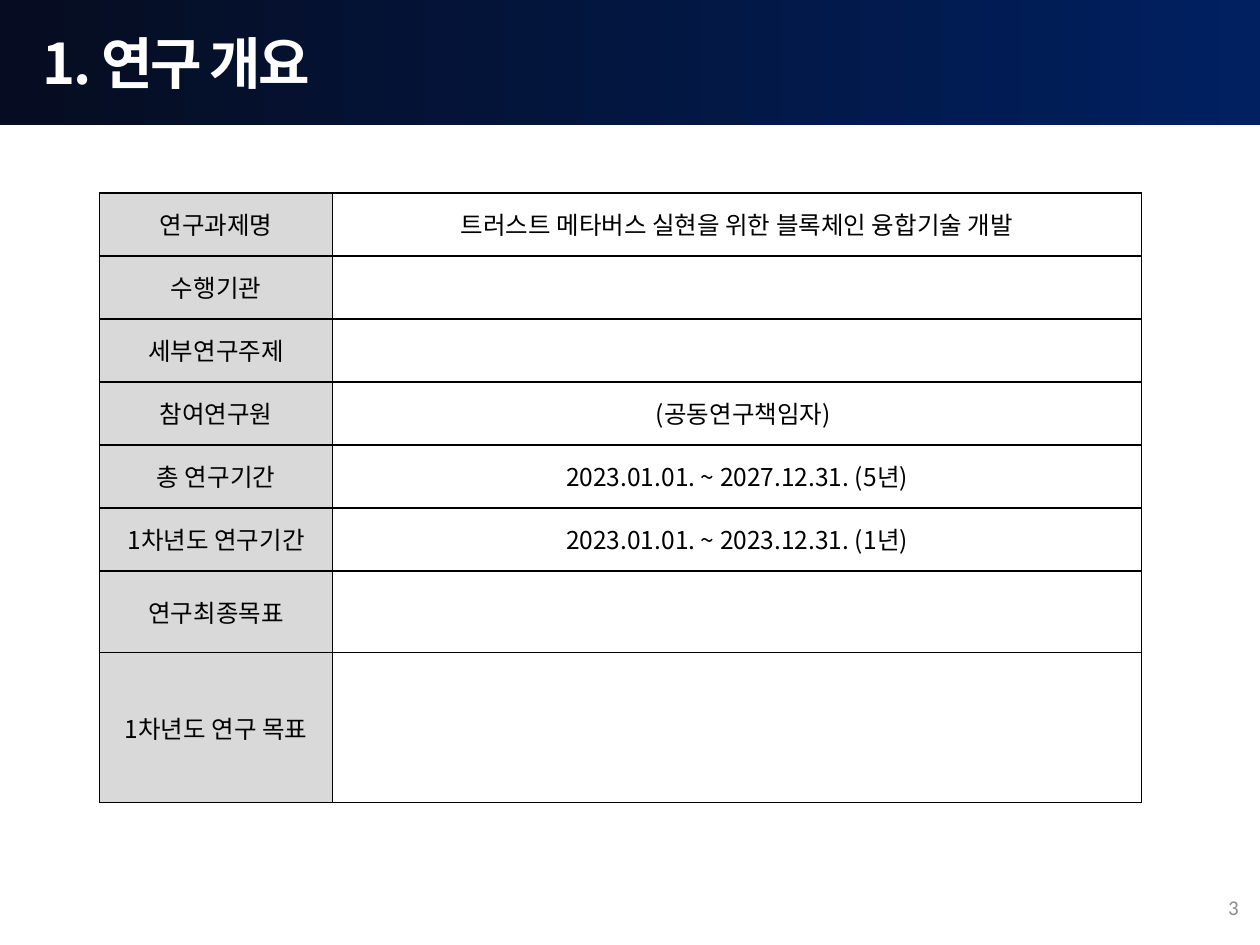
from pptx import Presentation, util as u
from pptx.dml.color import RGBColor
from pptx.enum import shapes, text
from pptx.oxml import parse_xml
from pptx.oxml.ns import nsdecls, qn

W, H = u.Inches(10), u.Inches(7.5)
KR = "Noto Sans CJK KR"
COLUMNS = [1.85, 6.42]
ROWS = [
    ("연구과제명", "트러스트 메타버스 실현을 위한 블록체인 융합기술 개발", 0.5),
    ("수행기관", "", 0.5),
    ("세부연구주제", "", 0.5),
    ("참여연구원", "(공동연구책임자)", 0.5),
    ("총 연구기간", "2023.01.01. ~ 2027.12.31. (5년)", 0.5),
    ("1차년도 연구기간", "2023.01.01. ~ 2023.12.31. (1년)", 0.5),
    ("연구최종목표", "", 0.65),
    ("1차년도 연구 목표", "", 1.19),
]


def rgb(value):
    return RGBColor.from_string(value)


def add_run(p, words, size, color, font=KR, bold=False, spacing=None):
    r = p.add_run()
    r.text = words
    r.font.size, r.font.name, r.font.bold = u.Pt(size), font, bold
    r.font.color.rgb = rgb(color)
    rPr = r.font._element
    rPr.find(qn("a:latin")).addnext(
        parse_xml(f'<a:ea {nsdecls("a")} typeface="{font}"/>'))
    if spacing is not None:
        rPr.set("spc", str(int(spacing * 100)))


def add_banner(s):
    sp = s.shapes.add_shape(shapes.MSO_SHAPE.RECTANGLE, 0, 0, W, u.Inches(0.99))
    sp.shadow.inherit = False
    sp.line.fill.background()
    sp.fill.gradient()
    sp.fill.gradient_angle = 0
    stops = [(0.02, "060D22"), (1, "002060")]
    for stop, (position, color) in zip(sp.fill.gradient_stops, stops):
        stop.position = position
        stop.color.rgb = rgb(color)


def add_title(s, words):
    sp = s.shapes.add_textbox(*map(u.Inches, (0.34, 0.23, 2.32, 0.54)))
    tf = sp.text_frame
    tf.margin_left = tf.margin_right = tf.margin_top = tf.margin_bottom = 0
    tf.word_wrap = False
    tf.auto_size = text.MSO_AUTO_SIZE.SHAPE_TO_FIT_TEXT
    add_run(tf.paragraphs[0], words, 32, "FFFFFF", bold=True, spacing=-1.5)


def add_page_number(s, number):
    sp = s.shapes.add_textbox(*map(u.Inches, (7.68, 7, 2.25, 0.4)))
    tf = sp.text_frame
    tf.word_wrap = True
    tf.vertical_anchor = text.MSO_ANCHOR.MIDDLE
    p = tf.paragraphs[0]
    p.alignment = text.PP_ALIGN.RIGHT
    add_run(p, number, 12, "8C8C8C", font="Calibri")


def set_borders(cell, color="000000", width=1):
    tcPr = cell._tc.get_or_add_tcPr()
    for i, side in enumerate(("lnL", "lnR", "lnT", "lnB")):
        tcPr.insert(i, parse_xml(
            f'<a:{side} {nsdecls("a")} w="{u.Pt(width)}"><a:solidFill>'
            f'<a:srgbClr val="{color}"/></a:solidFill></a:{side}>'))


def fill_cell(cell, words, color=None):
    if color:
        cell.fill.solid()
        cell.fill.fore_color.rgb = rgb(color)
    else:
        cell.fill.background()
    set_borders(cell)
    cell.vertical_anchor = text.MSO_ANCHOR.MIDDLE
    p = cell.text_frame.paragraphs[0]
    p.alignment = text.PP_ALIGN.CENTER
    if words:
        add_run(p, words, 14, "000000")


def add_overview(s):
    heights = [height for *_, height in ROWS]
    size = map(u.Inches, (0.79, 1.53, sum(COLUMNS), sum(heights)))
    table = s.shapes.add_table(len(ROWS), len(COLUMNS), *size).table
    table.first_row = table.horz_banding = False
    for column, width in zip(table.columns, COLUMNS):
        column.width = u.Inches(width)
    for row, (label, value, height) in zip(table.rows, ROWS):
        row.height = u.Inches(height)
        fill_cell(row.cells[0], label, "D9D9D9")
        fill_cell(row.cells[1], value)
    # The researcher entry sits slightly right of centre
    table.cell(3, 1).margin_left = u.Inches(0.2)


def main():
    prs = Presentation()
    prs.slide_width, prs.slide_height = W, H
    s = prs.slides.add_slide(prs.slide_layouts[6])
    # Header
    add_banner(s)
    add_title(s, "1. 연구 개요")
    # Project overview and footer
    add_overview(s)
    add_page_number(s, "3")
    prs.save("out.pptx")


if __name__ == "__main__":
    main()
